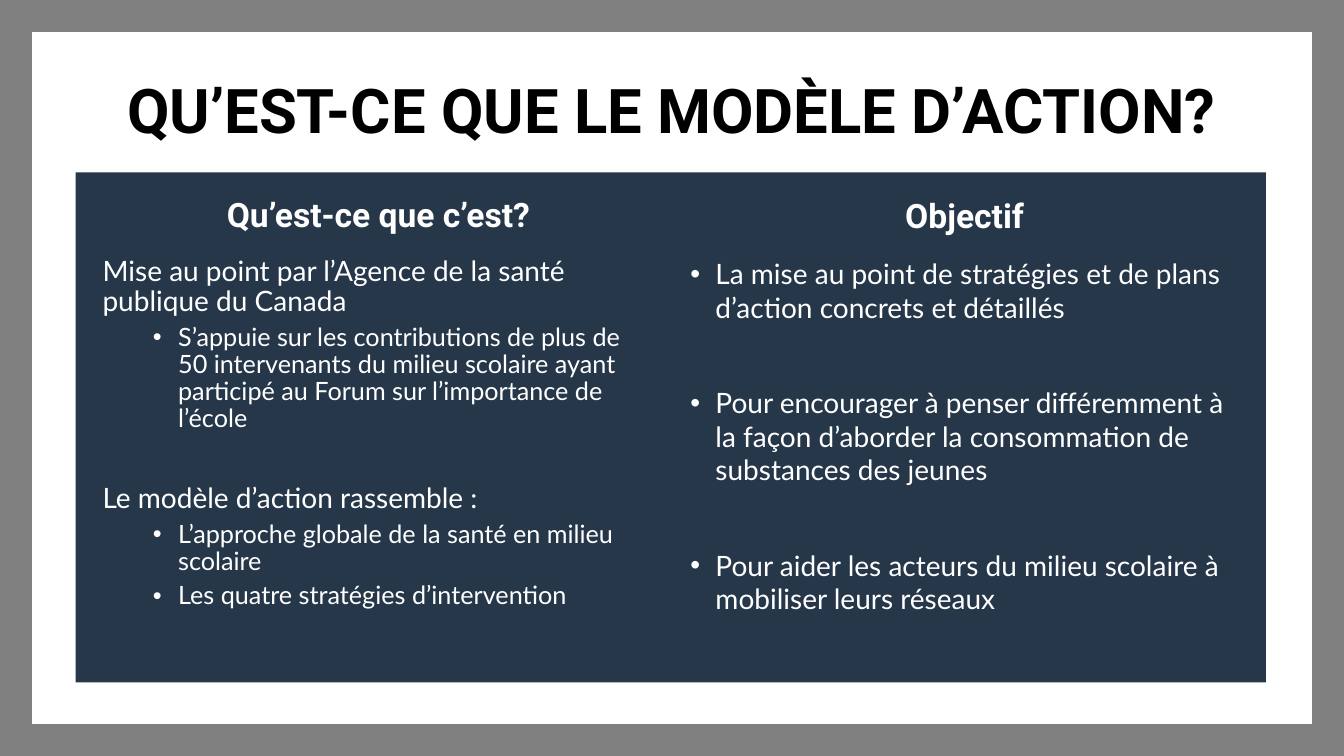
from lxml.etree import SubElement
from pptx import Presentation
from pptx.dml.color import RGBColor
from pptx.enum.shapes import MSO_SHAPE
from pptx.enum.text import MSO_ANCHOR, PP_ALIGN
from pptx.oxml.ns import qn
from pptx.util import Pt

NAVY = RGBColor(0x26, 0x37, 0x4A)
GREY = RGBColor(0x80, 0x80, 0x80)
WHITE = RGBColor(0xFF, 0xFF, 0xFF)
BLACK = RGBColor(0, 0, 0)

HEADING_FONT = "Roboto"
BODY_FONT = "Lato"


def write(para, text, size=20, font=BODY_FONT, color=WHITE, bold=False,
          align=PP_ALIGN.LEFT, spacing=1.0, before=0, indent=None, level=0):
    """Fill a paragraph; an indent in points makes it a bullet."""
    para.alignment = align
    para.line_spacing = spacing
    para.space_before = Pt(before)
    para.level = level
    span = para.add_run()
    span.text = text
    span.font.size = Pt(size)
    span.font.name = font
    span.font.bold = bold
    span.font.color.rgb = color
    if indent is not None:
        properties = para._p.get_or_add_pPr()
        properties.set("marL", str(Pt(indent)))
        properties.set("indent", str(Pt(-18)))
        SubElement(properties, qn("a:buFont")).set("typeface", "Arial")
        SubElement(properties, qn("a:buChar")).set("char", "•")


class SlideBuilder:
    def __init__(self, page):
        self.page = page

    def shape(self, kind, left, top, width, height, fill, line=None):
        shape = self.page.shapes.add_shape(
            kind, Pt(left), Pt(top), Pt(width), Pt(height))
        shape.shadow.inherit = False
        shape.fill.solid()
        shape.fill.fore_color.rgb = fill
        if line is None:
            shape.line.fill.background()
        else:
            shape.line.color.rgb = line
            shape.line.width = Pt(1)
        return shape

    def text(self, left, top, width, height, items, anchor=MSO_ANCHOR.TOP):
        box = self.page.shapes.add_textbox(
            Pt(left), Pt(top), Pt(width), Pt(height))
        frame = box.text_frame
        frame.word_wrap = True
        frame.vertical_anchor = anchor
        for index, (text, style) in enumerate(items):
            para = frame.add_paragraph() if index else frame.paragraphs[0]
            write(para, text, **style)

    def heading(self, left, top, width, height, text, size, color, anchor):
        style = dict(size=size, font=HEADING_FONT, color=color, bold=True,
                     align=PP_ALIGN.CENTER, spacing=0.9)
        self.text(left, top, width, height, [(text, style)], anchor)

    def column(self, left, top, width, title, items):
        self.heading(left, top, width, 38.9, title, 24, WHITE,
                     MSO_ANCHOR.BOTTOM)
        self.text(left, 180, width, 307.4, items)


def main():
    deck = Presentation()
    deck.slide_width, deck.slide_height = Pt(960), Pt(540)
    page = deck.slides.add_slide(deck.slide_layouts[6])
    page.background.fill.solid()
    page.background.fill.fore_color.rgb = WHITE
    builder = SlideBuilder(page)

    # Panel and title
    builder.shape(MSO_SHAPE.RECTANGLE, 54, 123.1, 850.3, 364.3, NAVY)
    builder.heading(66.2, 28.8, 828, 104.4,
                    "QU’EST-CE QUE LE MODÈLE D’ACTION?", 44, BLACK,
                    MSO_ANCHOR.MIDDLE)

    # Right column: bullets set well apart
    first_goal = dict(before=10, indent=18)
    next_goal = dict(before=44, indent=18)
    builder.column(486, 133.2, 406.1, "Objectif", [
        ("La mise au point de stratégies et de plans d’action concrets "
         "et détaillés", first_goal),
        ("Pour encourager à penser différemment à la façon d’aborder la "
         "consommation de substances des jeunes", next_goal),
        ("Pour aider les acteurs du milieu scolaire à mobiliser leurs "
         "réseaux", next_goal),
    ])

    # Left column: two statements with their details
    first_statement = dict(spacing=0.9, before=10)
    next_statement = dict(spacing=0.9, before=36.6)
    detail = dict(size=18, spacing=0.9, before=5, indent=54, level=1)
    builder.column(66.2, 132.5, 408.2, "Qu’est-ce que c’est?", [
        ("Mise au point par l’Agence de la santé publique du Canada",
         first_statement),
        ("S’appuie sur les contributions de plus de 50 intervenants du "
         "milieu scolaire ayant participé au Forum sur l’importance de "
         "l’école", detail),
        ("Le modèle d’action rassemble :", next_statement),
        ("L’approche globale de la santé en milieu scolaire", detail),
        ("Les quatre stratégies d’intervention", detail),
    ])

    # Border around the page
    border = builder.shape(MSO_SHAPE.FRAME, -0.6, -0.4, 961.2, 540.8,
                           GREY, line=GREY)
    border.adjustments[0] = 0.042

    deck.save("out.pptx")


if __name__ == "__main__":
    main()
